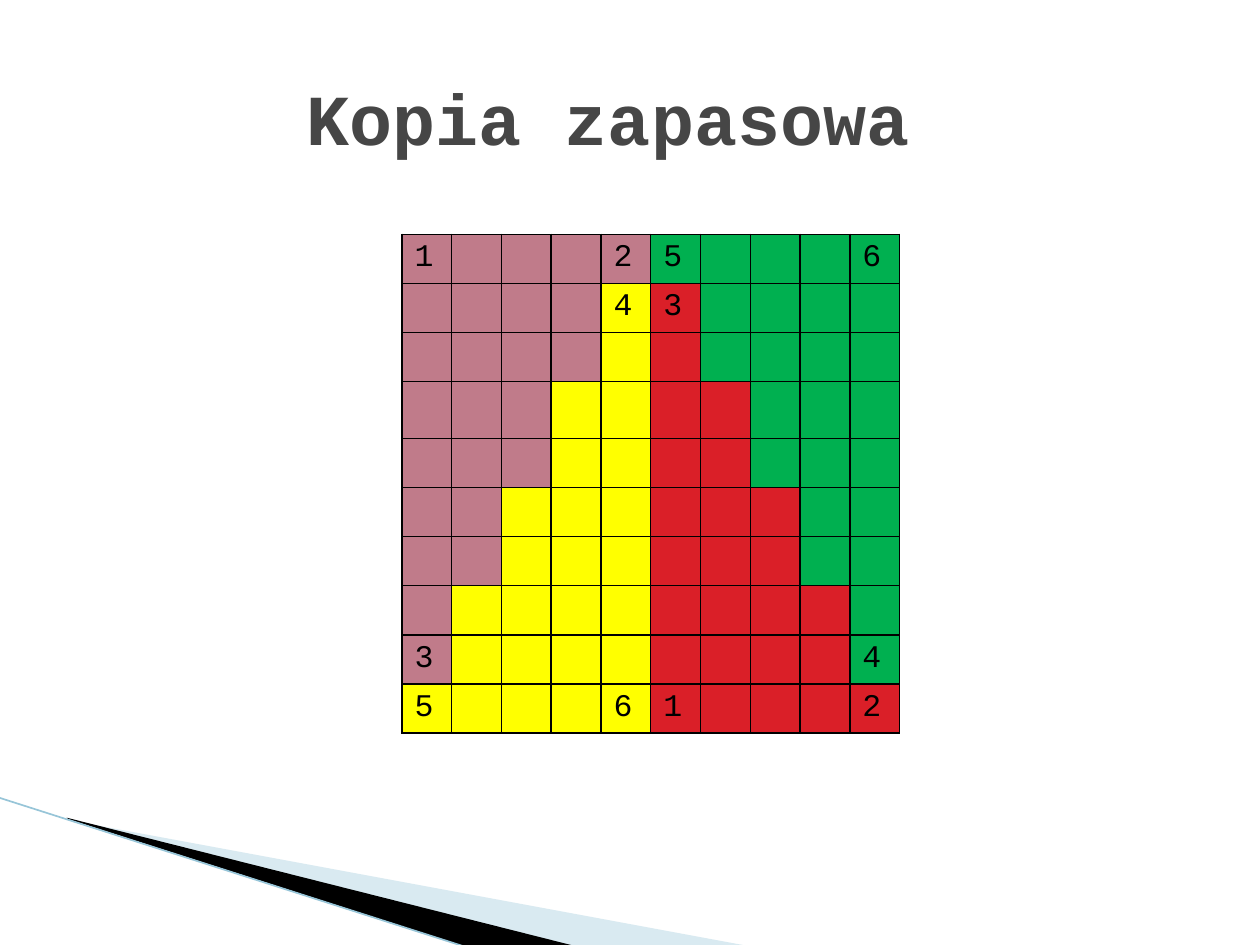
from dataclasses import dataclass
from typing import Optional

from lxml.etree import SubElement
from pptx import Presentation
from pptx.dml.color import RGBColor
from pptx.enum.shapes import MSO_CONNECTOR
from pptx.enum.text import MSO_ANCHOR, PP_ALIGN
from pptx.oxml.ns import qn
from pptx.util import Inches, Pt

BLACK = RGBColor(0x00, 0x00, 0x00)
PALE_BLUE = RGBColor(0xA0, 0xCB, 0xDC)
LINE_BLUE = RGBColor(0x97, 0xC5, 0xD8)
TITLE_GREY = RGBColor(0x46, 0x46, 0x46)
PINK = RGBColor(0xC0, 0x7B, 0x8A)
GREEN = RGBColor(0x00, 0xB0, 0x50)
YELLOW = RGBColor(0xFF, 0xFF, 0x00)
RED = RGBColor(0xDA, 0x1F, 0x28)

GRID_SIZE = 10
HALF = GRID_SIZE // 2
OUTER_COUNTS = (5, 4, 4, 3, 3, 2, 2, 1, 1, 0)
TALL_ROW = 3
NUMBERS = {
    (0, 0): "1", (0, 4): "2", (0, 5): "5", (0, 9): "6",
    (1, 4): "4", (1, 5): "3",
    (8, 0): "3", (8, 9): "4",
    (9, 0): "5", (9, 4): "6", (9, 5): "1", (9, 9): "2",
}
NUMBER_FORMAT = {"name": "Courier New", "size": Pt(18), "bold": False}
TITLE_FORMAT = {"name": "Courier New", "size": Pt(41), "bold": True}


@dataclass
class Wedge:
    points: list[tuple[float, float]]
    color: RGBColor
    opacity: Optional[int] = None


WEDGES = [
    Wedge([(0.55, 6.51), (5.95, 7.51), (4.56, 7.51), (0.55, 6.5)], PALE_BLUE, 40),
    Wedge([(0.53, 6.49), (4.57, 7.51), (3.72, 7.52), (0.54, 6.5)], BLACK),
]


def format_font(font, values: dict, color: RGBColor) -> None:
    for name, value in values.items():
        setattr(font, name, value)
    font.color.rgb = color


def draw_wedge(slide, wedge: Wedge) -> None:
    points = [(Inches(x), Inches(y)) for x, y in wedge.points]
    builder = slide.shapes.build_freeform(*points[0])
    builder.add_line_segments(points[1:], close=True)
    shape = builder.convert_to_shape()
    shape.shadow.inherit = False
    shape.line.fill.background()
    shape.fill.solid()
    shape.fill.fore_color.rgb = wedge.color
    if wedge.opacity is not None:
        color = next(shape.element.spPr.iter(qn("a:srgbClr")))
        SubElement(color, qn("a:alpha"), val=str(wedge.opacity * 1000))


def draw_edge_line(slide) -> None:
    connector = slide.shapes.add_connector(
        MSO_CONNECTOR.STRAIGHT, Inches(-0.01), Inches(6.33), Inches(3.71), Inches(7.52)
    )
    connector.line.color.rgb = LINE_BLUE
    connector.line.width = Pt(0.95)
    SubElement(connector.element.spPr, qn("a:effectLst"))


def cell_color(row: int, column: int) -> RGBColor:
    outer = OUTER_COUNTS[row]
    if column < HALF:
        return PINK if column < outer else YELLOW
    return GREEN if column >= GRID_SIZE - outer else RED


def add_borders(cell) -> None:
    properties = cell._tc.get_or_add_tcPr()
    for position, side in enumerate(("lnL", "lnR", "lnT", "lnB")):
        border = SubElement(properties, qn(f"a:{side}"), w=str(Pt(1)))
        fill = SubElement(border, qn("a:solidFill"))
        SubElement(fill, qn("a:srgbClr"), val=str(BLACK))
        properties.insert(position, border)


def draw_grid(slide) -> None:
    frame = slide.shapes.add_table(
        GRID_SIZE, GRID_SIZE, Inches(3.19), Inches(1.86), Inches(3.95), Inches(3.96)
    )
    table = frame.table
    table.first_row = False
    table.horz_banding = False
    for column in table.columns:
        column.width = Inches(3.95) // GRID_SIZE
    for row_index, row in enumerate(table.rows):
        row.height = Inches(0.45 if row_index == TALL_ROW else 0.39)
        for column_index, cell in enumerate(row.cells):
            cell.margin_bottom = Inches(0.02)
            cell.fill.solid()
            cell.fill.fore_color.rgb = cell_color(row_index, column_index)
            add_borders(cell)
            paragraph = cell.text_frame.paragraphs[0]
            number = NUMBERS.get((row_index, column_index))
            if number:
                run = paragraph.add_run()
                run.text = number
                format_font(run.font, NUMBER_FORMAT, BLACK)


def draw_title(slide) -> None:
    shape = slide.shapes.add_textbox(Inches(0.5), Inches(0.3), Inches(9), Inches(1.25))
    text_frame = shape.text_frame
    text_frame.word_wrap = True
    text_frame.vertical_anchor = MSO_ANCHOR.MIDDLE
    paragraph = text_frame.paragraphs[0]
    paragraph.alignment = PP_ALIGN.CENTER
    run = paragraph.add_run()
    run.text = "Kopia zapasowa "
    format_font(run.font, TITLE_FORMAT, TITLE_GREY)


def main() -> None:
    presentation = Presentation()
    presentation.slide_width = Inches(10)
    presentation.slide_height = Inches(7.5)
    slide = presentation.slides.add_slide(presentation.slide_layouts[6])
    for wedge in WEDGES:
        draw_wedge(slide, wedge)
    draw_edge_line(slide)
    draw_grid(slide)
    draw_title(slide)
    presentation.save("out.pptx")


if __name__ == "__main__":
    main()
